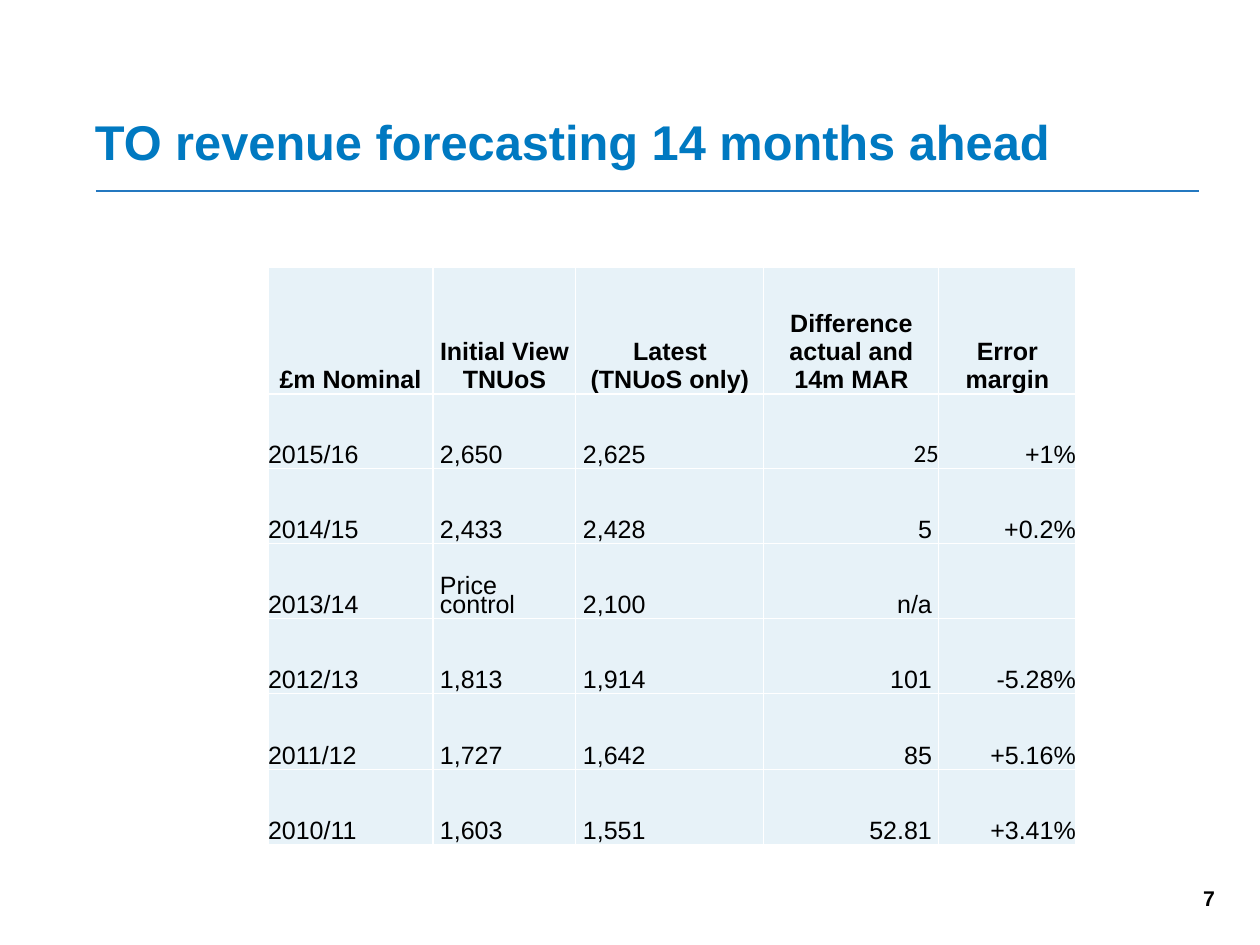
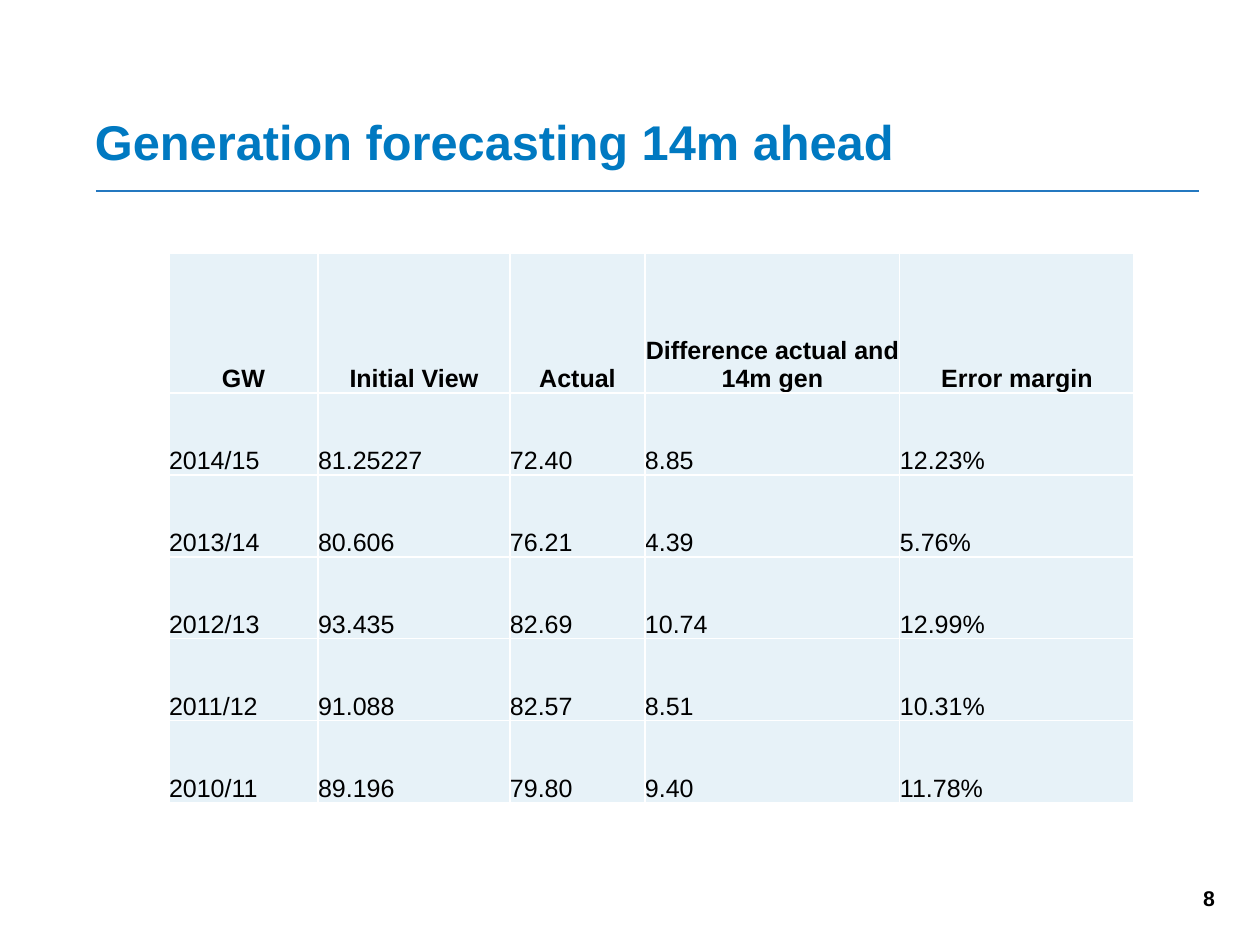
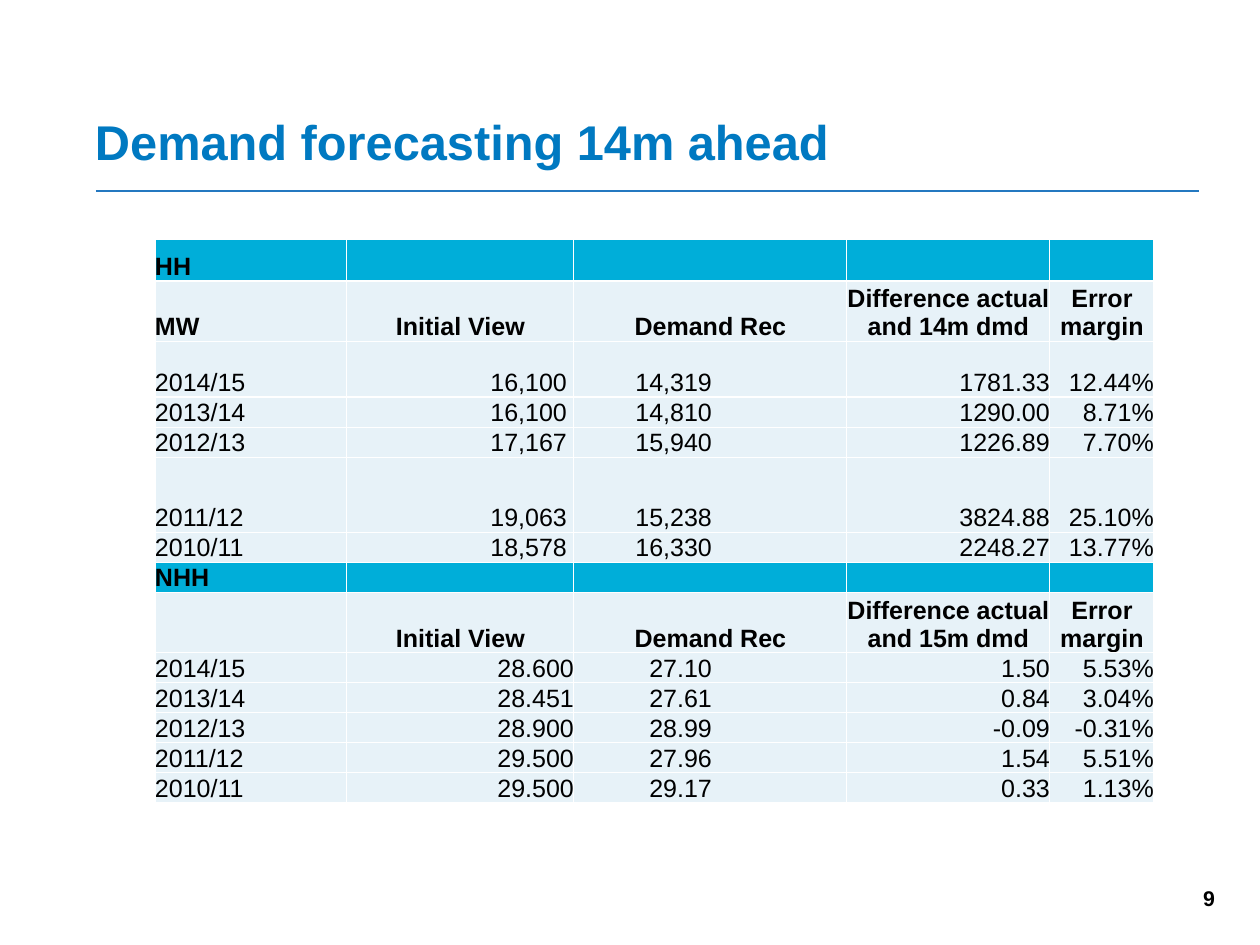
from dataclasses import dataclass

from lxml.etree import SubElement
from pptx import Presentation
from pptx.dml.color import RGBColor
from pptx.enum.shapes import MSO_CONNECTOR
from pptx.enum.text import MSO_ANCHOR, PP_ALIGN
from pptx.oxml import parse_xml
from pptx.oxml.ns import nsdecls, qn
from pptx.util import Pt

PX = 914400 // 90


@dataclass(frozen=True)
class Theme:
    title: RGBColor = RGBColor(0x00, 0x79, 0xC1)
    rule: RGBColor = RGBColor(0x24, 0x78, 0xC0)
    ink: RGBColor = RGBColor(0x00, 0x00, 0x00)
    cell: RGBColor = RGBColor(0xE7, 0xF2, 0xF8)
    section: RGBColor = RGBColor(0x00, 0xAE, 0xD9)
    border: str = "FFFFFF"
    font: str = "Arial"
    title_size: int = 39
    table_size: int = 20
    number_size: int = 17


theme = Theme()
LEFT, CENTER, RIGHT = PP_ALIGN.LEFT, PP_ALIGN.CENTER, PP_ALIGN.RIGHT


def add_text(para, text, size, color, bold, align, font=theme.font):
    para.alignment = align
    for index, line in enumerate(text.split("\n")):
        if index:
            para.add_line_break()
        span = para.add_run()
        span.text = line
        span.font.name = font
        span.font.size = Pt(size)
        span.font.bold = bold
        span.font.color.rgb = color


def add_box(page, place, text, size, color, align, anchor):
    box = page.shapes.add_textbox(*(length * PX for length in place))
    frame = box.text_frame
    frame.word_wrap = True
    frame.vertical_anchor = anchor
    frame.margin_left = frame.margin_right = 13 * PX
    frame.margin_top = frame.margin_bottom = 6 * PX
    add_text(frame.paragraphs[0], text, size, color, True, align)


# Column styles: alignment, left margin, right margin, line spacing in points
plain = (LEFT, 0, 0, None)
inset = (LEFT, 7, 7, 15)
flush = (RIGHT, 0, 0, None)
padded = (RIGHT, 0, 7, None)
middle = (RIGHT, 0, 135, None)

# Each row: kind, height, texts
revenue = {
    "title": "TO revenue forecasting 14 months ahead",
    "at": (268, 267),
    "widths": (165, 143, 188, 175, 137),
    "corner": CENTER,
    "styles": {"body": (plain, inset, inset, padded, flush)},
    "rows": [
        ("header", 127, ("£m Nominal", "Initial View TNUoS", "Latest\n(TNUoS only)",
                         "Difference actual and 14m MAR", "Error margin")),
        ("body", 75, ("2015/16", "2,650", "2,625", "25", "+1%")),
        ("body", 75, ("2014/15", "2,433", "2,428", "5", "+0.2%")),
        ("body", 75, ("2013/14", "Price control", "2,100", "n/a", "")),
        ("body", 75, ("2012/13", "1,813", "1,914", "101", "-5.28%")),
        ("body", 76, ("2011/12", "1,727", "1,642", "85", "+5.16%")),
        ("body", 75, ("2010/11", "1,603", "1,551", "52.81", "+3.41%")),
    ],
    # This one figure is set in another font and runs to the cell's edge
    "exceptions": {(1, 3): ("Calibri", flush)},
}
generation = {
    "title": "Generation forecasting 14m ahead",
    "at": (169, 253),
    "widths": (149, 192, 135, 255, 234),
    "corner": CENTER,
    "styles": {"body": (plain,) * 5},
    "rows": [
        ("header", 140, ("GW", "Initial View", "Actual",
                         "Difference actual and 14m gen", "Error margin")),
        ("body", 82, ("2014/15", "81.25227", "72.40", "8.85", "12.23%")),
        ("body", 82, ("2013/14", "80.606", "76.21", "4.39", "5.76%")),
        ("body", 82, ("2012/13", "93.435", "82.69", "10.74", "12.99%")),
        ("body", 82, ("2011/12", "91.088", "82.57", "8.51", "10.31%")),
        ("body", 82, ("2010/11", "89.196", "79.80", "9.40", "11.78%")),
    ],
    "exceptions": {},
}
demand = {
    "title": "Demand forecasting 14m ahead",
    "at": (155, 239),
    "widths": (192, 227, 273, 203, 104),
    "corner": LEFT,
    "styles": {"body": (plain, padded, middle, flush, flush),
               "nhh": (plain, flush, middle, flush, flush)},
    "rows": [
        ("section", 42, ("HH", "", "", "", "")),
        ("header", 56, ("MW", "Initial View", "Demand Rec",
                        "Difference actual and 14m dmd", "Error margin")),
        ("body", 56, ("2014/15", "16,100", "14,319", "1781.33", "12.44%")),
        ("body", 28, ("2013/14", "16,100", "14,810", "1290.00", "8.71%")),
        ("body", 28, ("2012/13", "17,167", "15,940", "1226.89", "7.70%")),
        ("body", 75, ("2011/12", "19,063", "15,238", "3824.88", "25.10%")),
        ("body", 28, ("2010/11", "18,578", "16,330", "2248.27", "13.77%")),
        ("section", 30, ("NHH", "", "", "", "")),
        ("header", 56, ("", "Initial View", "Demand Rec",
                        "Difference actual and 15m dmd", "Error margin")),
        ("nhh", 28, ("2014/15", "28.600", "27.10", "1.50", "5.53%")),
        ("nhh", 28, ("2013/14", "28.451", "27.61", "0.84", "3.04%")),
        ("nhh", 28, ("2012/13", "28.900", "28.99", "-0.09", "-0.31%")),
        ("nhh", 28, ("2011/12", "29.500", "27.96", "1.54", "5.51%")),
        ("nhh", 28, ("2010/11", "29.500", "29.17", "0.33", "1.13%")),
    ],
    "exceptions": {},
}

deck = Presentation()
deck.slide_width, deck.slide_height = 1260 * PX, 945 * PX

for number, topic in enumerate((revenue, generation, demand), start=7):
    page = deck.slides.add_slide(deck.slide_layouts[6])

    # Rule, title and page number
    rule = page.shapes.add_connector(
        MSO_CONNECTOR.STRAIGHT, 96 * PX, 191 * PX, 1199 * PX, 191 * PX)
    rule.line.color.rgb = theme.rule
    rule.line.width = Pt(1.5)
    SubElement(rule._element.spPr, qn("a:effectLst"))
    add_box(page, (82, 104, 1115, 72), topic["title"], theme.title_size,
            theme.title, LEFT, MSO_ANCHOR.BOTTOM)
    add_box(page, (934, 879, 294, 50), str(number), theme.number_size,
            theme.ink, RIGHT, MSO_ANCHOR.TOP)

    # Table grid
    rows, widths = topic["rows"], topic["widths"]
    left, top = topic["at"]
    height = sum(row[1] for row in rows)
    table = page.shapes.add_table(
        len(rows), len(widths), left * PX, top * PX,
        sum(widths) * PX, height * PX).table
    table.first_row = table.horz_banding = False
    for column, width in zip(table.columns, widths):
        column.width = width * PX

    # Table cells
    for row_index, (kind, row_height, texts) in enumerate(rows):
        table.rows[row_index].height = row_height * PX
        for column_index, text in enumerate(texts):
            if kind == "header":
                style = (CENTER if column_index else topic["corner"], 0, 0, None)
            else:
                style = topic["styles"].get(kind, (plain,) * 5)[column_index]
            font, style = topic["exceptions"].get(
                (row_index, column_index), (theme.font, style))
            align, margin_left, margin_right, spacing = style

            cell = table.cell(row_index, column_index)
            cell.vertical_anchor = MSO_ANCHOR.BOTTOM
            cell.margin_left, cell.margin_right = margin_left * PX, margin_right * PX
            cell.margin_top = cell.margin_bottom = 0
            cell.fill.solid()
            cell.fill.fore_color.rgb = theme.section if kind == "section" else theme.cell
            properties = cell._tc.get_or_add_tcPr()
            for position, side in enumerate("LRTB"):
                properties.insert(position, parse_xml(
                    f'<a:ln{side} {nsdecls("a")} w="{Pt(1)}"><a:solidFill>'
                    f'<a:srgbClr val="{theme.border}"/></a:solidFill></a:ln{side}>'))
            if text:
                para = cell.text_frame.paragraphs[0]
                if spacing:
                    para.line_spacing = Pt(spacing)
                add_text(para, text, theme.table_size, theme.ink,
                         kind in ("header", "section"), align, font)

deck.save("out.pptx")
